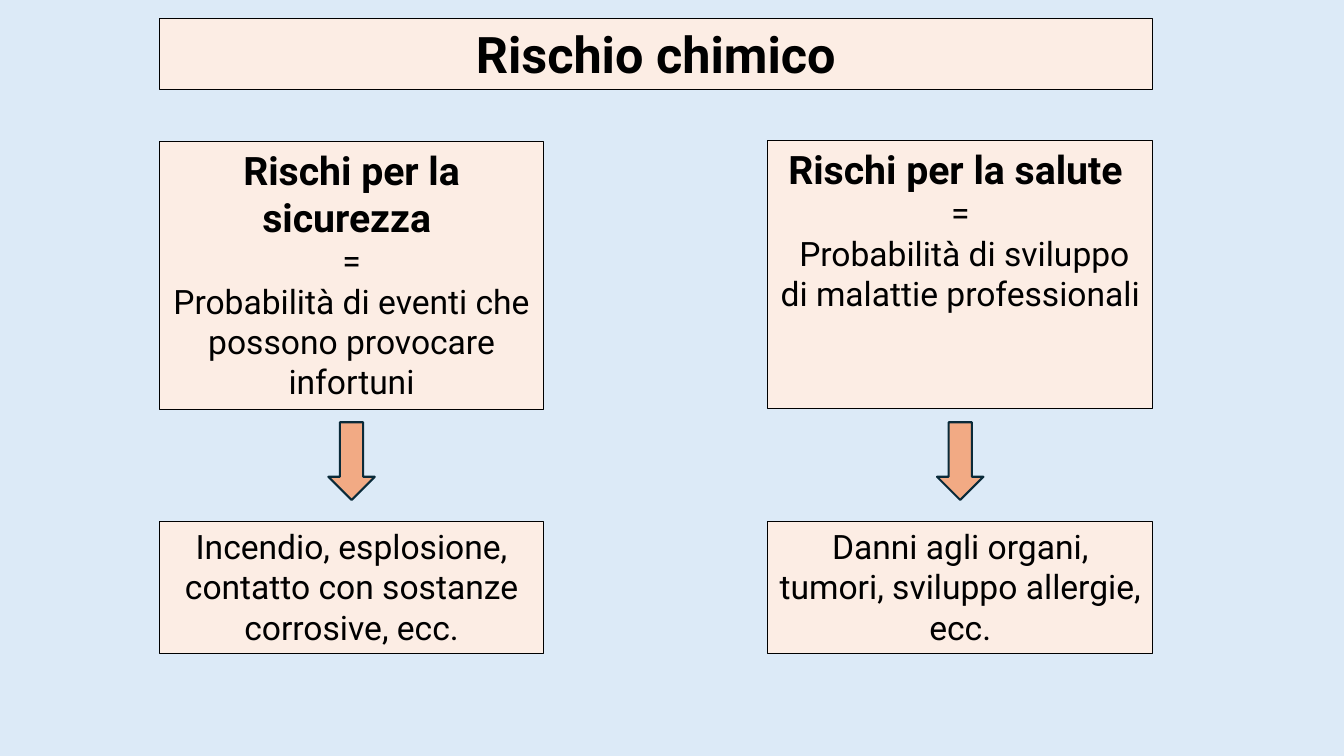
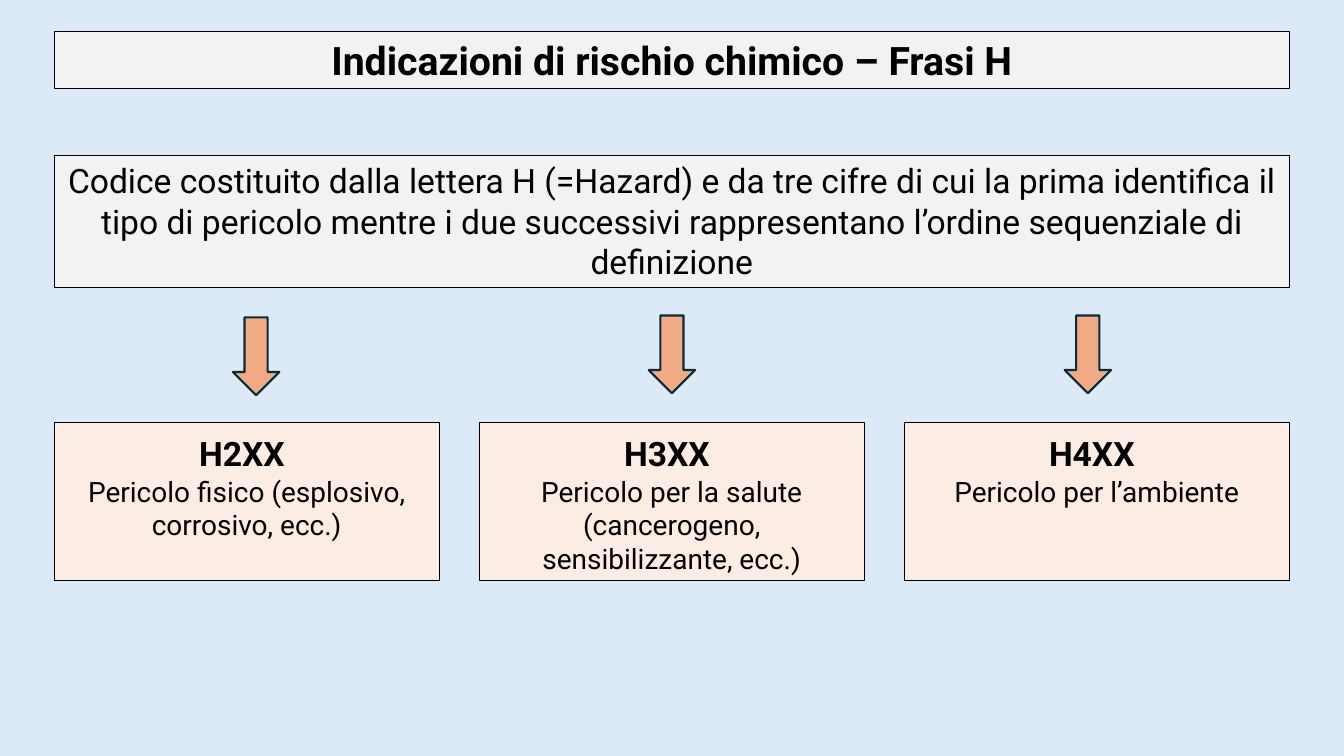
"""Build two slides on chemical risk and its hazard codes."""
from pptx import Presentation
from pptx.dml.color import RGBColor
from pptx.enum.shapes import MSO_SHAPE
from pptx.enum.text import MSO_ANCHOR, PP_ALIGN
from pptx.util import Cm, Pt

RECTANGLE, DOWN_ARROW = MSO_SHAPE.RECTANGLE, MSO_SHAPE.DOWN_ARROW
TOP, CENTER = MSO_ANCHOR.TOP, PP_ALIGN.CENTER

FONT = "Roboto"
COLORS = {
    "background": "DCEAF7",
    "peach": "FCEDE4",
    "gray": "F2F2F2",
    "arrow": "F2AA84",
    "arrow_line": "092A39",
    "black": "000000",
}

RISK_TITLE = "Rischio chimico"
RISKS = [
    {
        "heading": "Rischi per la sicurezza ",
        "meaning": "Probabilità di eventi che possono provocare infortuni",
        "effects": "Incendio, esplosione, contatto con sostanze corrosive, ecc.",
        "top": 3.56,
    },
    {
        "heading": "Rischi per la salute ",
        "meaning": " Probabilità di sviluppo di malattie professionali",
        "effects": "Danni agli organi, tumori, sviluppo allergie, ecc.",
        "top": 3.53,
    },
]

CODE_TITLE = "Indicazioni di rischio chimico – Frasi H"
CODE_RULE = (
    "Codice costituito dalla lettera H (=Hazard) e da tre cifre di cui la prima "
    "identifica il tipo di pericolo mentre i due successivi rappresentano "
    "l’ordine sequenziale di definizione"
)
CODES = [
    ("H2XX", "Pericolo fisico (esplosivo, corrosivo, ecc.)", 8),
    ("H3XX", "Pericolo per la salute (cancerogeno, sensibilizzante, ecc.)", 7.95),
    ("H4XX", "Pericolo per l’ambiente", 7.95),
]

SLIDE_WIDTH, SLIDE_HEIGHT = 33.87, 19.05
BOX_WIDTH = 9.7
TEXT_BOX_HEIGHT = 3.33
ARROW_WIDTH, ARROW_HEIGHT = 1.17, 1.96
ARROW_STEP = 10.48
RISK_LEFT, RISK_WIDTH = 4.01, 25.04
CODE_LEFT, CODE_WIDTH = 1.37, 31.12


def color(name):
    return RGBColor.from_string(COLORS[name])


def add_figure(slide, kind, left, top, width, height, fill, line, line_width):
    shape = slide.shapes.add_shape(kind, Cm(left), Cm(top), Cm(width), Cm(height))
    shape.shadow.inherit = False
    shape.fill.solid()
    shape.fill.fore_color.rgb = color(fill)
    shape.line.color.rgb = color(line)
    shape.line.width = Pt(line_width)
    return shape


def add_text(paragraph, text, size=24, bold=False):
    run = paragraph.add_run()
    run.text = text
    run.font.name = FONT
    run.font.size = Pt(size)
    run.font.bold = bold
    run.font.color.rgb = color("black")


def add_box(slide, paragraphs, left, top, width, height, fill="peach"):
    shape = add_figure(slide, RECTANGLE, left, top, width, height, fill, "black", 0.75)
    frame = shape.text_frame
    frame.word_wrap = True
    frame.vertical_anchor = TOP
    for index, runs in enumerate(paragraphs):
        paragraph = frame.add_paragraph() if index else frame.paragraphs[0]
        paragraph.alignment = CENTER
        for text, style in runs:
            add_text(paragraph, text, **style)


def add_arrow(slide, center, top):
    add_figure(slide, DOWN_ARROW, center - ARROW_WIDTH / 2, top,
               ARROW_WIDTH, ARROW_HEIGHT, "arrow", "arrow_line", 1.5)


def column_lefts(left, width, count):
    step = (width - BOX_WIDTH) / (count - 1)
    return [left + step * index for index in range(count)]


def build_risks(slide):
    title = [[(RISK_TITLE, {"size": 36, "bold": True})]]
    add_box(slide, title, RISK_LEFT, 0.46, RISK_WIDTH, 1.8)
    lefts = column_lefts(RISK_LEFT, RISK_WIDTH, len(RISKS))
    for left, risk in zip(lefts, RISKS):
        definition = [
            [(risk["heading"], {"size": 28, "bold": True})],
            [("=", {})],
            [(risk["meaning"], {})],
        ]
        add_box(slide, definition, left, risk["top"], BOX_WIDTH, 6.76)
        add_arrow(slide, left + BOX_WIDTH / 2, 10.64)
        add_box(slide, [[(risk["effects"], {})]], left, 13.13, BOX_WIDTH, TEXT_BOX_HEIGHT)


def build_codes(slide):
    title = [[(CODE_TITLE, {"size": 28, "bold": True})]]
    add_box(slide, title, CODE_LEFT, 0.79, CODE_WIDTH, 1.45, fill="gray")
    add_box(slide, [[(CODE_RULE, {})]], CODE_LEFT, 3.91, CODE_WIDTH, TEXT_BOX_HEIGHT, fill="gray")
    lefts = column_lefts(CODE_LEFT, CODE_WIDTH, len(CODES))
    for index, (left, (code, meaning, arrow_top)) in enumerate(zip(lefts, CODES)):
        offset = index - (len(CODES) - 1) / 2
        add_arrow(slide, SLIDE_WIDTH / 2 + ARROW_STEP * offset, arrow_top)
        paragraphs = [
            [(code, {"bold": True}), (" ", {"size": 28, "bold": True})],
            [(meaning, {"size": 20})],
        ]
        add_box(slide, paragraphs, left, 10.64, BOX_WIDTH, 3.99)


def main():
    presentation = Presentation()
    presentation.slide_width = Cm(SLIDE_WIDTH)
    presentation.slide_height = Cm(SLIDE_HEIGHT)
    background = presentation.slide_master.background.fill
    background.solid()
    background.fore_color.rgb = color("background")
    for build in (build_risks, build_codes):
        build(presentation.slides.add_slide(presentation.slide_layouts[6]))
    presentation.save("out.pptx")


if __name__ == "__main__":
    main()
